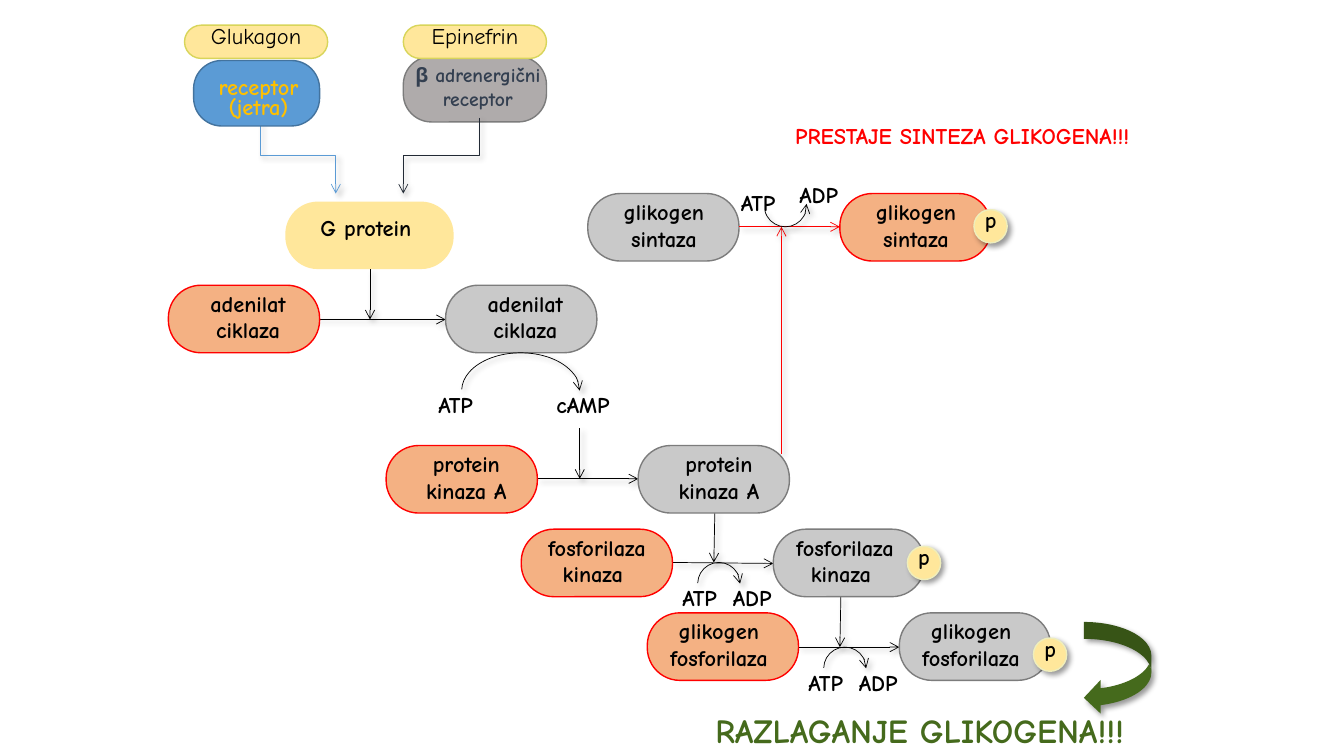
import pptx
import pptx.dml.color
import pptx.enum.shapes
import pptx.enum.text
import pptx.oxml
import pptx.oxml.ns
import pptx.util

SCALE = 9144
SHAPE = pptx.enum.shapes.MSO_SHAPE
CONNECTOR = pptx.enum.shapes.MSO_CONNECTOR
ALIGN = pptx.enum.text.PP_ALIGN
NODE_WIDTH, NODE_HEIGHT, ATP_ARC = 150, 67, 42
ACTIVE = ("C9C9C9", "7C7C7C")
INACTIVE = ("F4B183", "FF0000")
SHADOW = (
    '<a:outerShdw %s blurRad="50800" dist="38100" dir="2700000" algn="tl" rotWithShape="0">'
    '<a:srgbClr val="000000"><a:alpha val="40000"/></a:srgbClr></a:outerShdw>'
) % pptx.oxml.ns.nsdecls("a")


def px(*lengths):
    """Turn px lengths into EMU."""
    return [pptx.util.Emu(length * SCALE) for length in lengths]


def colour(value):
    """Turn a hex string into a colour."""
    return pptx.dml.color.RGBColor.from_string(value)


def apply_format(target, values):
    """Set each named attribute on the target."""
    for name, value in values.items():
        setattr(target, name, value)


def cast_shadow(shape):
    """Give a shape or connector a soft shadow."""
    properties = shape._element.spPr
    effects = properties.find(pptx.oxml.ns.qn("a:effectLst"))
    if effects is None:
        effects = pptx.oxml.parse_xml("<a:effectLst %s/>" % pptx.oxml.ns.nsdecls("a"))
        properties.append(effects)
    effects.append(pptx.oxml.parse_xml(SHADOW))


def style_arrow(shape, hex_colour, end="tailEnd"):
    """Draw a thin shadowed line with an open arrowhead."""
    shape.line.color.rgb = colour(hex_colour)
    shape.line.width = pptx.util.Pt(0.5)
    arrowhead = '<a:%s %s type="arrow"/>' % (end, pptx.oxml.ns.nsdecls("a"))
    shape.line._get_or_add_ln().append(pptx.oxml.parse_xml(arrowhead))
    cast_shadow(shape)


def add_block(shapes, kind, box, fill, line=None, rounding=None):
    """Add a filled preset shape in the box."""
    shape = shapes.add_shape(kind, *px(*box))
    shape.shadow.inherit = False
    shape.fill.solid()
    shape.fill.fore_color.rgb = colour(fill)
    if line:
        shape.line.color.rgb = colour(line)
        shape.line.width = pptx.util.Pt(1)
    else:
        shape.line.fill.background()
    if rounding is not None:
        shape.adjustments[0] = rounding
    return shape


def add_label(shapes, box, lines, hex_colour="000000", size=16, spacing=19,
              bold=True, wrap=True, align=ALIGN.CENTER):
    """Add a text box with one paragraph per line."""
    frame = shapes.add_textbox(*px(*box)).text_frame
    apply_format(frame, {
        "word_wrap": wrap,
        "auto_size": pptx.enum.text.MSO_AUTO_SIZE.SHAPE_TO_FIT_TEXT,
    })
    for index, line in enumerate(lines):
        paragraph = frame.add_paragraph() if index else frame.paragraphs[0]
        paragraph.alignment = align
        if spacing:
            paragraph.line_spacing = pptx.util.Pt(spacing)
        run = paragraph.add_run()
        run.text = line
        apply_format(run.font, {"name": "Comic Neue", "size": pptx.util.Pt(size), "bold": bold})
        run.font.color.rgb = colour(hex_colour)


def add_tag(slide, left, top, width, text):
    """Add a short left-aligned molecule name."""
    add_label(slide.shapes, (left, top, width, 37), [text],
              spacing=None, wrap=False, align=ALIGN.LEFT)


def add_arrow(slide, start, end, hex_colour="000000"):
    """Add a straight arrow."""
    connector = slide.shapes.add_connector(CONNECTOR.STRAIGHT, *px(*start, *end))
    style_arrow(connector, hex_colour)


def add_elbow(slide, start_x, end_x, top, drop, hex_colour):
    """Add a down-across-down arrow whose width equals its drop."""
    connector = slide.shapes.add_connector(CONNECTOR.ELBOW, *px(end_x, top, start_x, top + drop))
    turn = 270 if end_x > start_x else 90
    connector._element.spPr.xfrm.set("rot", str(turn * 60000))
    style_arrow(connector, hex_colour)


def add_arc(slide, box, angles=(108.743, 0), end="tailEnd"):
    """Add a half-turn arrow in the box."""
    arc = slide.shapes.add_shape(SHAPE.ARC, *px(*box))
    arc.shadow.inherit = False
    arc.fill.background()
    for index, angle in enumerate(angles):
        arc.adjustments[index] = angle
    style_arrow(arc, hex_colour="000000", end=end)


def add_enzyme(slide, left, top, lines, colours, inset, text_width, badge_drop=None):
    """Add an enzyme capsule, with a phosphate badge if a drop is given."""
    shapes = slide.shapes.add_group_shape().shapes
    add_block(shapes, SHAPE.ROUNDED_RECTANGLE, (left, top, NODE_WIDTH, NODE_HEIGHT),
              *colours, rounding=0.482)
    add_label(shapes, (left + inset, top, text_width, 63), lines)
    if badge_drop is not None:
        badge_left, badge_top = left + 133, top + badge_drop
        badge = add_block(shapes, SHAPE.OVAL, (badge_left, badge_top, 33, 33), "FFE79B", "EFEEBC")
        cast_shadow(badge)
        add_label(shapes, (badge_left, badge_top - 8, 33, 37), ["p"])


def add_hormone(slide, left, top, name):
    """Add a yellow hormone capsule."""
    shapes = slide.shapes.add_group_shape().shapes
    add_block(shapes, SHAPE.ROUNDED_RECTANGLE, (left, top, 142, 33), "FFE79B", "D8D55A", 0.5)
    add_label(shapes, (left, top - 8, 142, 37), [name], spacing=None, bold=False)


def add_receptor(slide, box, colours, rounding, label_box, lines, **text_format):
    """Add a signal protein capsule with an unwrapped label."""
    shapes = slide.shapes.add_group_shape().shapes
    add_block(shapes, SHAPE.ROUNDED_RECTANGLE, box, *colours, rounding=rounding)
    add_label(shapes, label_box, lines, wrap=False, **text_format)


def add_signal(slide):
    """Add the receptors, the hormones and the G protein."""
    add_receptor(slide, (400, 56, 142, 65), ("AFABAB", "7C7C7C"), 0.429, (392, 58, 164, 57),
                 ["β adrenergični", "receptor"], hex_colour="333F50", size=14, spacing=None)
    add_receptor(slide, (283, 200, 167, 67), ("FFE79B",), 0.482, (308, 208, 121, 37),
                 ["G protein"], spacing=None, align=ALIGN.LEFT)
    add_elbow(slide, 258, 333, 117, 75, "5B9BD5")
    add_elbow(slide, 475, 400, 117, 75, "222A35")
    add_receptor(slide, (192, 60, 125, 65), ("5B9BD5", "43739E"), 0.429, (200, 75, 113, 49),
                 ["receptor", "(jetra)"], hex_colour="FFC000", spacing=14)
    add_hormone(slide, 183, 25, "Glukagon")
    add_hormone(slide, 400, 25, "Epinefrin")


def add_cascade(slide):
    """Add the enzymes and the arrows of the cascade."""
    for start, end in [
        ((367, 267), (367, 317)), ((292, 317), (442, 317)), ((575, 425), (575, 475)),
        ((533, 475), (633, 475)), ((709, 508), (708, 558)), ((667, 558), (767, 559)),
        ((834, 592), (833, 642)), ((792, 642), (892, 642)),
    ]:
        add_arrow(slide, start, end)
    cyclase, kinase = ["adenilat", "ciklaza"], ["protein", "kinaza A"]
    phosphorylase_kinase = ["fosforilaza", "kinaza "]
    phosphorylase, synthase = ["glikogen fosforilaza"], ["glikogen", "sintaza"]
    for enzyme in [
        (167, 283, cyclase, INACTIVE, 25, 108), (442, 283, cyclase, ACTIVE, 25, 108),
        (383, 442, kinase, INACTIVE, 17, 125), (633, 442, kinase, ACTIVE, 9, 142),
        (517, 525, phosphorylase_kinase, INACTIVE, 0, 150),
        (767, 525, phosphorylase_kinase, ACTIVE, 0, 142, 17),
        (642, 608, phosphorylase, INACTIVE, 0, 142),
        (892, 608, phosphorylase, ACTIVE, 0, 142, 25),
        (583, 192, synthase, ACTIVE, 17, 117),
    ]:
        add_enzyme(slide, *enzyme)
    add_arrow(slide, (775, 450), (775, 225), "FF0000")
    add_arrow(slide, (733, 225), (833, 225), "FF0000")
    add_enzyme(slide, 833, 192, synthase, INACTIVE, 17, 117, 16)


def add_conversions(slide):
    """Add the ATP conversions beside the reactions."""
    add_arc(slide, (458, 350, 117, 75))
    add_tag(slide, 425, 383, 64, "ATP")
    add_tag(slide, 542, 383, 80, "cAMP")
    for left, top in [(692, 558), (817, 642)]:
        add_arc(slide, (left, top, ATP_ARC, ATP_ARC))
        add_tag(slide, left - 25, top + 17, 64, "ATP")
        add_tag(slide, left + 25, top + 17, 65, "ADP")
    add_arc(slide, (758, 183, ATP_ARC, ATP_ARC), (213.136, 99.56), "headEnd")
    add_tag(slide, 725, 183, 64, "ATP")
    add_tag(slide, 783, 175, 65, "ADP")


def add_outcomes(slide):
    """Add the two conclusions and the curved arrow."""
    add_label(slide.shapes, (742, 117, 425, 37), ["PRESTAJE SINTEZA GLIKOGENA!!!"], "FF0000")
    add_label(slide.shapes, (658, 713, 508, 37), ["RAZLAGANJE GLIKOGENA!!!"], "456A1C", 24)
    cast_shadow(add_block(slide.shapes, SHAPE.CURVED_LEFT_ARROW, (1075, 617, 67, 92), "456A1C"))


def main():
    """Build and save the slide."""
    presentation = pptx.Presentation()
    presentation.slide_width, presentation.slide_height = px(1333, 750)
    slide = presentation.slides.add_slide(presentation.slide_layouts[6])
    for add_region in (add_signal, add_cascade, add_conversions, add_outcomes):
        add_region(slide)
    presentation.save("out.pptx")


if __name__ == "__main__":
    main()
